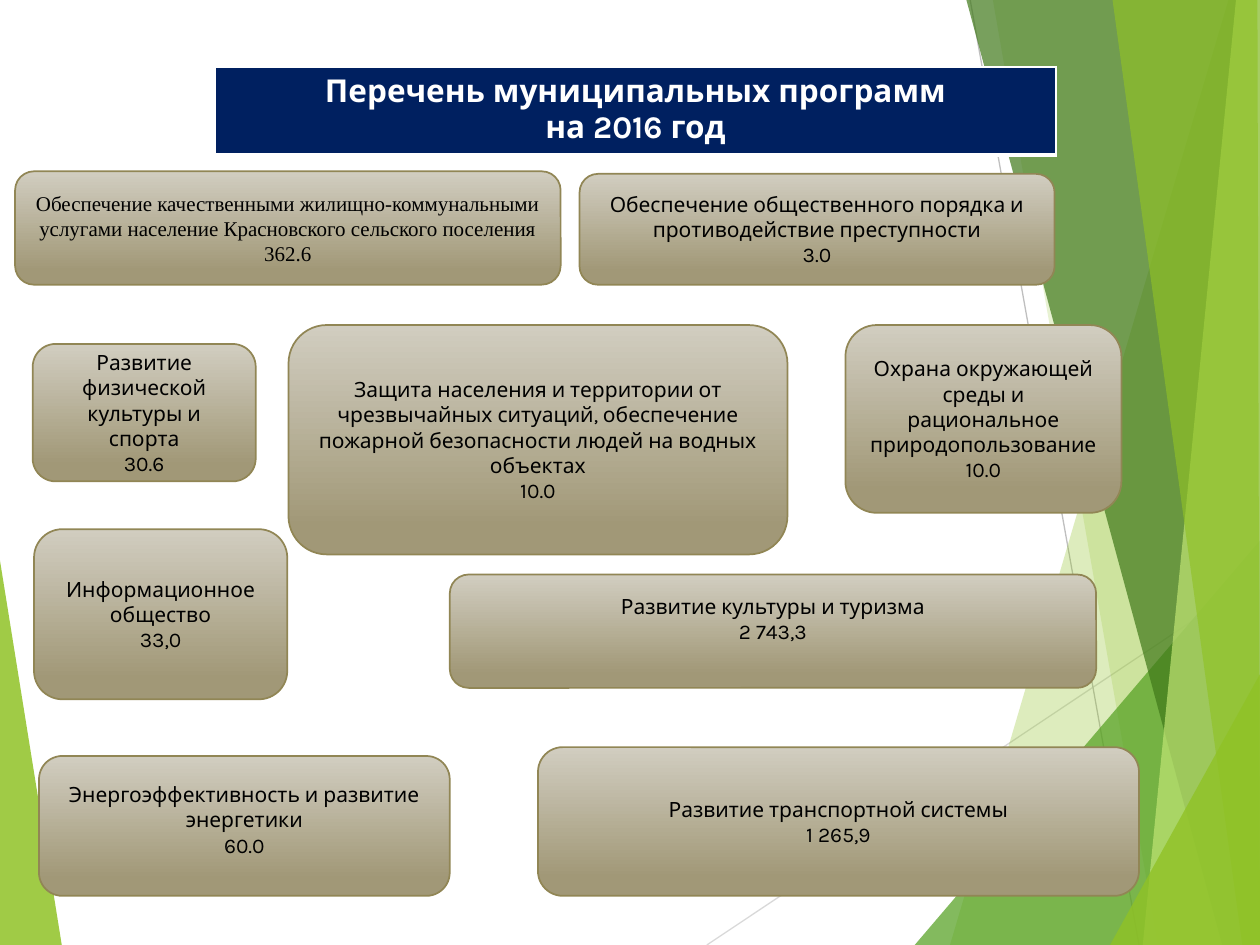
from dataclasses import dataclass

import pptx
import pptx.dml.color
import pptx.enum.shapes
import pptx.enum.text
import pptx.oxml
import pptx.oxml.ns
import pptx.util
from pptx.util import Inches

COLORS = {
    "lime": "90C226", "green": "54A021", "forest": "3F7819", "pale": "C0E474",
    "line": "D9D9D9", "line_dark": "BFBFBF", "navy": "002060", "white": "FFFFFF",
    "black": "000000", "card_top": "D1CDC0", "card_bottom": "A19877", "card_line": "918655",
}


@dataclass
class Facet:
    color: str
    alpha: int
    points: list[tuple[float, float]]


@dataclass
class Program:
    left: float
    top: float
    width: float
    height: float
    name: str
    amount: str
    font: str = "Karla"
    raise_by: float = 0


FACETS_LEFT = [Facet("lime", 85, [(0, 4.45), (0.49, 7.5), (0, 7.5)])]
FACETS_RIGHT = [
    Facet("lime", 30, [(9.75, 0), (7.54, 7.5), (10, 7.5), (10, 0)]),
    Facet("lime", 20, [(7.88, 0), (9.19, 7.5), (10, 7.5), (10, 0)]),
    Facet("green", 72, [(7.26, 7.5), (10, 4.29), (10, 7.5)]),
    Facet("forest", 70, [(7.67, 0), (9.7, 7.5), (10, 7.5), (10, 0)]),
    Facet("pale", 70, [(9.81, 0), (9.07, 7.5), (10, 7.5), (10, 0)]),
    Facet("lime", 65, [(8.83, 0), (9.86, 7.5), (10, 7.5), (9.98, 0)]),
    Facet("lime", 80, [(8.81, 7.5), (10, 5.35), (10, 7.5)]),
]
PROGRAMS = [
    Program(0.12, 1.36, 4.33, 0.9, "Обеспечение качественными жилищно-коммунальными услугами "
            "население Красновского сельского поселения", "362.6", font="Times New Roman"),
    Program(4.6, 1.38, 3.77, 0.88,
            "Обеспечение общественного порядка и противодействие преступности", "3.0"),
    Program(2.29, 2.58, 3.96, 1.82, "Защита населения и территории от чрезвычайных ситуаций, "
            "обеспечение пожарной безопасности людей на водных объектах", "10.0"),
    Program(6.71, 2.58, 2.19, 1.49,
            "Охрана окружающей среды и рациональное природопользование", "10.0"),
    Program(0.26, 2.73, 1.77, 1.09, "Развитие физической культуры и спорта", "30.6"),
    Program(0.27, 4.2, 2.01, 1.35, "Информационное общество", "33,0"),
    Program(3.57, 4.56, 5.13, 0.9, "Развитие культуры и туризма", "2 743,3", raise_by=0.1),
    Program(4.27, 5.93, 4.77, 1.18, "Развитие транспортной системы", "1 265,9"),
    Program(0.31, 6, 3.26, 1.11, "Энергоэффективность и развитие энергетики", "60.0",
            raise_by=0.05),
]


def rgb(name: str) -> pptx.dml.color.RGBColor:
    return pptx.dml.color.RGBColor.from_string(COLORS[name])


def write_lines(tf, *lines: str, font: str = "Karla", size: int = 12,
                color: str = "black", bold: bool = False) -> None:
    """Write each line as a centred paragraph."""
    for i, line in enumerate(lines):
        p = tf.paragraphs[0] if i == 0 else tf.add_paragraph()
        p.alignment = pptx.enum.text.PP_ALIGN.CENTER
        r = p.add_run()
        r.text = line
        r.font.name = font
        r.font.size = pptx.util.Pt(size)
        r.font.bold = bold
        r.font.color.rgb = rgb(color)


def add_facet(s, facet: Facet) -> None:
    points = [(Inches(x), Inches(y)) for x, y in facet.points]
    builder = s.shapes.build_freeform(*points[0])
    builder.add_line_segments(points[1:], close=True)
    sp = builder.convert_to_shape()
    sp.shadow.inherit = False
    sp.fill.solid()
    sp.fill.fore_color.rgb = rgb(facet.color)
    sp.line.fill.background()
    clr = sp._element.spPr.find(".//" + pptx.oxml.ns.qn("a:srgbClr"))
    alpha = pptx.oxml.parse_xml(
        f'<a:alpha {pptx.oxml.ns.nsdecls("a")} val="{facet.alpha * 1000}"/>')
    clr.append(alpha)


def add_thin_line(s, x1: float, y1: float, x2: float, y2: float, color: str) -> None:
    c = s.shapes.add_connector(pptx.enum.shapes.MSO_CONNECTOR.STRAIGHT,
                               Inches(x1), Inches(y1), Inches(x2), Inches(y2))
    c.line.color.rgb = rgb(color)
    c.line.width = pptx.util.Pt(0.75)
    c._element.spPr.append(
        pptx.oxml.parse_xml(f'<a:effectLst {pptx.oxml.ns.nsdecls("a")}/>'))


def add_heading(s, *lines: str) -> None:
    """Add the one-cell heading table with white borders."""
    table = s.shapes.add_table(1, 1, Inches(1.71), Inches(0.53), Inches(6.67), Inches(0.7)).table
    cell = table.cell(0, 0)
    write_lines(cell.text_frame, *lines, size=18, color="white", bold=True)
    tc_pr = cell._tc.get_or_add_tcPr()
    for side, width in {"L": 1, "R": 1, "T": 1, "B": 3}.items():
        tc_pr.append(pptx.oxml.parse_xml(
            f'<a:ln{side} {pptx.oxml.ns.nsdecls("a")} w="{pptx.util.Pt(width)}"><a:solidFill>'
            f'<a:srgbClr val="{COLORS["white"]}"/></a:solidFill></a:ln{side}>'))
    cell.fill.solid()
    cell.fill.fore_color.rgb = rgb("navy")


def add_program(s, program: Program) -> None:
    sp = s.shapes.add_shape(
        pptx.enum.shapes.MSO_SHAPE.ROUNDED_RECTANGLE, Inches(program.left), Inches(program.top),
        Inches(program.width), Inches(program.height))
    sp.shadow.inherit = False
    sp.fill.gradient()
    sp.fill.gradient_angle = 270
    stops = zip(sp.fill.gradient_stops, (0, 0.88), ("card_top", "card_bottom"))
    for stop, position, color in stops:
        stop.position = position
        stop.color.rgb = rgb(color)
    sp.line.color.rgb = rgb("card_line")
    sp.line.width = pptx.util.Pt(1)
    tf = sp.text_frame
    tf.word_wrap = True
    tf.vertical_anchor = pptx.enum.text.MSO_ANCHOR.MIDDLE
    tf.margin_bottom = Inches(0.05 + 2 * program.raise_by)
    write_lines(tf, program.name, program.amount, font=program.font)


def main() -> None:
    prs = pptx.Presentation()
    prs.slide_width, prs.slide_height = Inches(10), Inches(7.5)
    s = prs.slides.add_slide(prs.slide_layouts[6])
    for facet in FACETS_LEFT:
        add_facet(s, facet)
    add_thin_line(s, 5.61, 7.5, 10, 4.57, "line")
    add_thin_line(s, 7.7, 0, 9.04, 7.5, "line_dark")
    for facet in FACETS_RIGHT:
        add_facet(s, facet)
    add_heading(s, "Перечень муниципальных программ", "на 2016 год")
    for program in PROGRAMS:
        add_program(s, program)
    prs.save("out.pptx")


if __name__ == "__main__":
    main()
